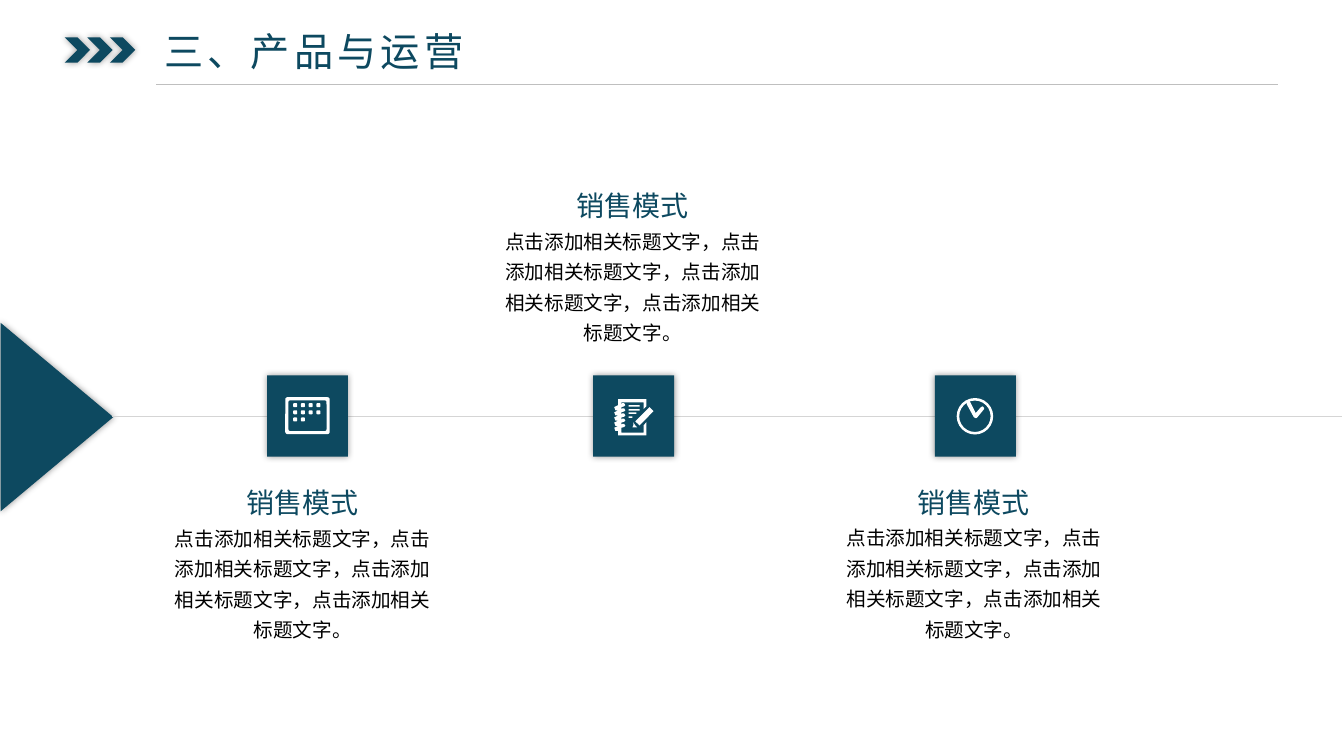
from lxml.etree import SubElement
from pptx import Presentation
from pptx.dml.color import RGBColor
from pptx.enum.shapes import MSO_CONNECTOR, MSO_SHAPE as Preset
from pptx.enum.text import MSO_AUTO_SIZE as AutoSize, PP_ALIGN as Align
from pptx.oxml.ns import qn
from pptx.util import Cm, Pt

COLORS = {"teal": "0D4960", "white": "FFFFFF", "black": "000000",
          "rule": "BFBFBF", "timeline": "D5D5D5"}
HEADING_FONT, BODY_FONT = "Noto Sans CJK JP", "Noto Sans CJK SC"


def paint(shape, color, shadowed=False):
    shape.fill.solid()
    shape.fill.fore_color.rgb = RGBColor.from_string(COLORS[color])
    shape.line.fill.background()
    shape.shadow.inherit = False
    if shadowed:
        effects = shape._element.spPr.find(qn("a:effectLst"))
        shadow = SubElement(effects, qn("a:outerShdw"), blurRad=str(Pt(5)),
                            dist="0", algn="ctr", rotWithShape="0")
        tone = SubElement(shadow, qn("a:srgbClr"), val=COLORS["black"])
        SubElement(tone, qn("a:alpha"), val="40000")


def write(left, top, width, height, text, size, font, color, wrap=True):
    box = page.shapes.add_textbox(Cm(left), Cm(top), Cm(width), Cm(height))
    box.text_frame.word_wrap = wrap
    box.text_frame.auto_size = AutoSize.SHAPE_TO_FIT_TEXT
    para = box.text_frame.paragraphs[0]
    span = para.add_run()
    span.text = text
    span.font.size = Pt(size)
    span.font.name = font
    span.font.color.rgb = RGBColor.from_string(COLORS[color])
    SubElement(span.font._element, qn("a:ea"), typeface=font)
    return box, para, span


deck = Presentation()
deck.slide_width, deck.slide_height = Cm(33.87), Cm(19.05)
page = deck.slides.add_slide(deck.slide_layouts[6])

# Title with three chevrons
for i in range(3):
    chevron = page.shapes.add_shape(Preset.CHEVRON, Cm(1.63 + 0.57 * i), Cm(0.94),
                                    Cm(0.64), Cm(0.64))
    paint(chevron, "teal", shadowed=True)
box, para, span = write(3.94, 0.58, 14.73, 1.4, "三、产品与运营", 28, HEADING_FONT, "teal")
box.text_frame.margin_left = box.text_frame.margin_right = Cm(0.2)
box.text_frame.margin_top = box.text_frame.margin_bottom = Cm(0.1)
span.font._element.set("spc", "300")

# Arrowhead entering from the left edge
arrowhead = page.shapes.add_shape(Preset.ISOSCELES_TRIANGLE, Cm(-0.94), Cm(9.09),
                                  Cm(4.75), Cm(2.84))
arrowhead.rotation = 90
paint(arrowhead, "teal", shadowed=True)

# Title rule and timeline
for start, end, y, color, weight in [(3.94, 32.21, 2.12, "rule", 0.5),
                                     (2.82, 33.81, 10.49, "timeline", 1)]:
    line = page.shapes.add_connector(MSO_CONNECTOR.STRAIGHT, Cm(start), Cm(y), Cm(end), Cm(y))
    line.line.color.rgb = RGBColor.from_string(COLORS[color])
    line.line.width = Pt(weight)
    SubElement(line._element.spPr, qn("a:effectLst"))

# Milestones: tile on the timeline, caption above or below it
BODY = "点击添加相关标题文字，" * 3 + "点击添加相关标题文字。"
for tile_left, center, top in [(6.73, 7.63, 11.86), (14.95, 15.95, 4.37), (23.56, 24.55, 11.85)]:
    tile = page.shapes.add_shape(Preset.RECTANGLE, Cm(tile_left), Cm(9.46), Cm(2.04), Cm(2.05))
    paint(tile, "teal", shadowed=True)
    captions = [
        write(center - 1.68, top, 3.35, 1.27, "销售模式", 20, HEADING_FONT, "teal", wrap=False),
        write(center - 3.48, top + 1.11, 6.96, 3.38, BODY, 14, BODY_FONT, "black"),
    ]
    for box, para, span in captions:
        para.alignment = Align.CENTER
        para.line_spacing = 1.3

# Calendar icon: frame, then rows of day marks
calendar_parts = [(7.19, 10.01, 1.12, 0.93, "white", 0.06),
                  (7.27, 10.09, 0.96, 0.77, "teal", 0.06)]
for row, days in enumerate([4, 4, 2]):
    for day in range(days):
        calendar_parts.append((7.39 + 0.195 * day, 10.16 + 0.18 * row, 0.1, 0.1, "white", 0.25))
for left, top, width, height, color, rounding in calendar_parts:
    part = page.shapes.add_shape(Preset.ROUNDED_RECTANGLE, Cm(left), Cm(top),
                                 Cm(width), Cm(height))
    part.adjustments[0] = rounding
    paint(part, color)

# Clock icon: ring
ring = page.shapes.add_shape(Preset.DONUT, Cm(24.11), Cm(10.03), Cm(0.92), Cm(0.92))
ring.adjustments[0] = 0.07
paint(ring, "white")
clock_hands = [(33, 8), (48, 38), (61, 23), (66, 21), (69, 25), (69, 28),
               (51, 50), (48, 51), (43, 48), (25, 15), (25, 10), (28, 8)]

# Notebook icon: page with five binder rings, text lines and a pencil
RINGS = [13 * i for i in range(5)]
binding = [(x, y + drop) for drop in RINGS
           for x, y in [(18, 13), (20, 10), (25, 10), (28, 15), (25, 18), (18, 20)]]
ring_ends = [(x, y + drop) for drop in reversed(RINGS)
             for x, y in [(10, 28), (3, 28), (0, 20), (10, 15)]]
sheet = [(10, 0), (81, 0), (81, 18), (74, 25), (74, 8), (18, 8), *binding,
         (18, 84), (74, 84), (74, 66), (81, 58), (81, 91), (10, 91), *ring_ends]
text_lines = [[(36, y), (right, y), (right, y + 4), (36, y + 4)]
              for y, right in [(15, 64), (25, 64), (33, 56), (43, 46)]]
pencil_tip = [(48, 58), (53, 66), (58, 71), (46, 71), (48, 66)]
pencil = [(89, 20), (99, 30), (64, 66), (53, 56)]

# Outlines are in hundredths of a centimetre from the corner of their icon
for left, top, outlines in [(24.11, 10.03, [clock_hands]),
                            (15.48, 10.06, [sheet, *text_lines, pencil_tip, pencil])]:
    builder = page.shapes.build_freeform(*outlines[0][0], scale=Cm(0.01))
    builder.add_line_segments(outlines[0][1:])
    for outline in outlines[1:]:
        builder.move_to(*outline[0])
        builder.add_line_segments(outline[1:])
    paint(builder.convert_to_shape(Cm(left), Cm(top)), "white")

deck.save("out.pptx")
